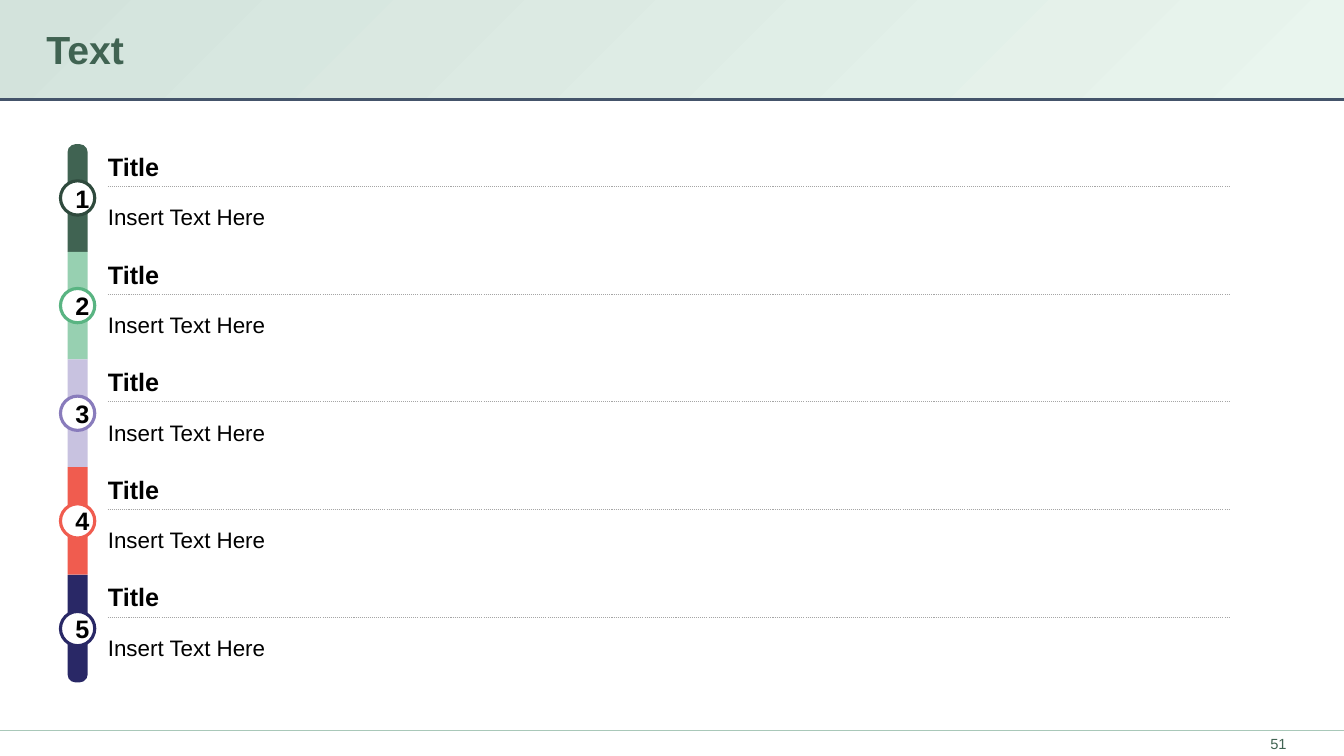
from lxml import etree
from pptx import Presentation
from pptx import util as u
from pptx.dml.color import RGBColor
from pptx.enum import dml, shapes, text
from pptx.oxml.ns import qn

WIDTH, HEIGHT = 13.33, 7.5
WHITE = RGBColor(0xFF, 0xFF, 0xFF)
BLACK = RGBColor(0, 0, 0)
GREEN = RGBColor(0x40, 0x63, 0x52)
SLATE = RGBColor(0x44, 0x54, 0x6A)
HEADER_START = RGBColor(0xD3, 0xE3, 0xDC)
HEADER_END = RGBColor(0xE9, 0xF5, 0xEE)
FOOTER_RULE = RGBColor(0xA9, 0xC8, 0xB9)
GREY = RGBColor(0xA5, 0xA5, 0xA5)
MINT = RGBColor(0x97, 0xD0, 0xB1)
LILAC = RGBColor(0xC8, 0xC2, 0xE0)
CORAL = RGBColor(0xF0, 0x5C, 0x4F)
NAVY = RGBColor(0x29, 0x28, 0x66)
DARK_GREEN = RGBColor(0x2F, 0x4A, 0x3D)
MID_GREEN = RGBColor(0x59, 0xB4, 0x82)
PURPLE = RGBColor(0x89, 0x7C, 0xBC)

PRESET = shapes.MSO_SHAPE
MIDDLE = text.MSO_ANCHOR.MIDDLE
CENTER = text.PP_ALIGN.CENTER
ITEMS = [
    ("Title", "Insert Text Here", GREEN, DARK_GREEN),
    ("Title", "Insert Text Here", MINT, MID_GREEN),
    ("Title", "Insert Text Here", LILAC, PURPLE),
    ("Title", "Insert Text Here", CORAL, CORAL),
    ("Title", "Insert Text Here", NAVY, NAVY),
]


def inches(*lengths):
    return [u.Inches(length) for length in lengths]


def add_block(slide, preset, box, fill=None):
    block = slide.shapes.add_shape(preset, *inches(*box))
    block.shadow.inherit = False
    block.line.fill.background()
    if fill is not None:
        block.fill.solid()
        block.fill.fore_color.rgb = fill
    return block


def add_rule(slide, left, right, y, color, dash=None):
    rule = slide.shapes.add_connector(
        shapes.MSO_CONNECTOR.STRAIGHT, *inches(left, y, right, y))
    rule.line.color.rgb = color
    rule.line.width = u.Pt(0.75)
    if dash is not None:
        rule.line.dash_style = dash
    etree.SubElement(rule._element.spPr, qn("a:effectLst"))


def write(frame, words, size, color, bold=False, anchor=text.MSO_ANCHOR.TOP,
          align=text.PP_ALIGN.LEFT, insets=(0, 0)):
    frame.word_wrap = True
    frame.vertical_anchor = anchor
    frame.margin_left = frame.margin_right = u.Inches(insets[0])
    frame.margin_top = frame.margin_bottom = u.Inches(insets[1])
    line = frame.paragraphs[0]
    line.alignment = align
    run = line.add_run()
    run.text = words
    run.font.name = "Arial"
    run.font.size = u.Pt(size)
    run.font.bold = bold
    run.font.color.rgb = color


def add_label(slide, box, words, size, color, **style):
    label = slide.shapes.add_textbox(*inches(*box))
    write(label.text_frame, words, size, color, **style)


def draw_header(slide, box, heading):
    left, top, width, height = box
    add_block(slide, PRESET.RECTANGLE, (left, top + height - 0.05, width, 0.05), SLATE)
    band = add_block(slide, PRESET.RECTANGLE, (left, top, width, height - 0.03))
    band.fill.gradient()
    band.fill.gradient_angle = 315
    for stop, color in zip(band.fill.gradient_stops, (HEADER_START, HEADER_END)):
        stop.color.rgb = color
    add_label(slide, (left + 0.46, top + 0.08, width - 0.92, 0.8), heading, 28, GREEN,
              bold=True, anchor=MIDDLE)


def draw_footer(slide, box, number):
    left, top, width, height = box
    add_rule(slide, left, left + width, top, FOOTER_RULE)
    add_label(slide, (left + width - 0.84, top + 0.01, 0.38, height - 0.02), number,
              10.5, GREEN, anchor=MIDDLE, align=CENTER)


def draw_item(slide, box, number, item, is_first, is_last):
    left, top, width, height = box
    title, body, bar_color, ring_color = item
    bar_width, ring = 0.2, 0.34
    text_left = left + 0.47
    add_rule(slide, text_left, left + width, top + 0.42, GREY,
             dml.MSO_LINE.ROUND_DOT)
    add_label(slide, (text_left, top + 0.07, 7.12, 0.3), title, 18, BLACK,
              bold=True, anchor=text.MSO_ANCHOR.BOTTOM)
    add_label(slide, (text_left, top + 0.59, 7.12, 0.27), body, 16, BLACK)

    is_end = is_first or is_last
    bar = add_block(slide, PRESET.ROUND_2_SAME_RECTANGLE if is_end else PRESET.RECTANGLE,
                    (left + (ring - bar_width) / 2, top, bar_width, height), bar_color)
    if is_end:
        bar.adjustments[0] = 0.4 if is_first else 0
        bar.adjustments[1] = 0.4 if is_last else 0
    badge = add_block(slide, PRESET.OVAL,
                      (left, top + (height - ring) / 2, ring, ring), WHITE)
    badge.line.color.rgb = ring_color
    badge.line.width = u.Pt(2.25)
    write(badge.text_frame, str(number), 18, BLACK, bold=True, anchor=MIDDLE,
          align=CENTER, insets=(0.1, 0.05))


def draw_list(slide, box, items):
    left, top, width, height = box
    row = height / len(items)
    for index, item in enumerate(items):
        draw_item(slide, (left, top + index * row, width, row), index + 1, item,
                  index == 0, index == len(items) - 1)


def main():
    deck = Presentation()
    deck.slide_width, deck.slide_height = inches(WIDTH, HEIGHT)
    slide = deck.slides.add_slide(deck.slide_layouts[6])
    draw_header(slide, (0, 0, WIDTH, 1), "Text")
    draw_footer(slide, (0, 7.25, WIDTH, 0.25), "51")
    draw_list(slide, (0.6, 1.43, 11.6, 5.34), ITEMS)
    deck.save("out.pptx")


if __name__ == "__main__":
    main()
